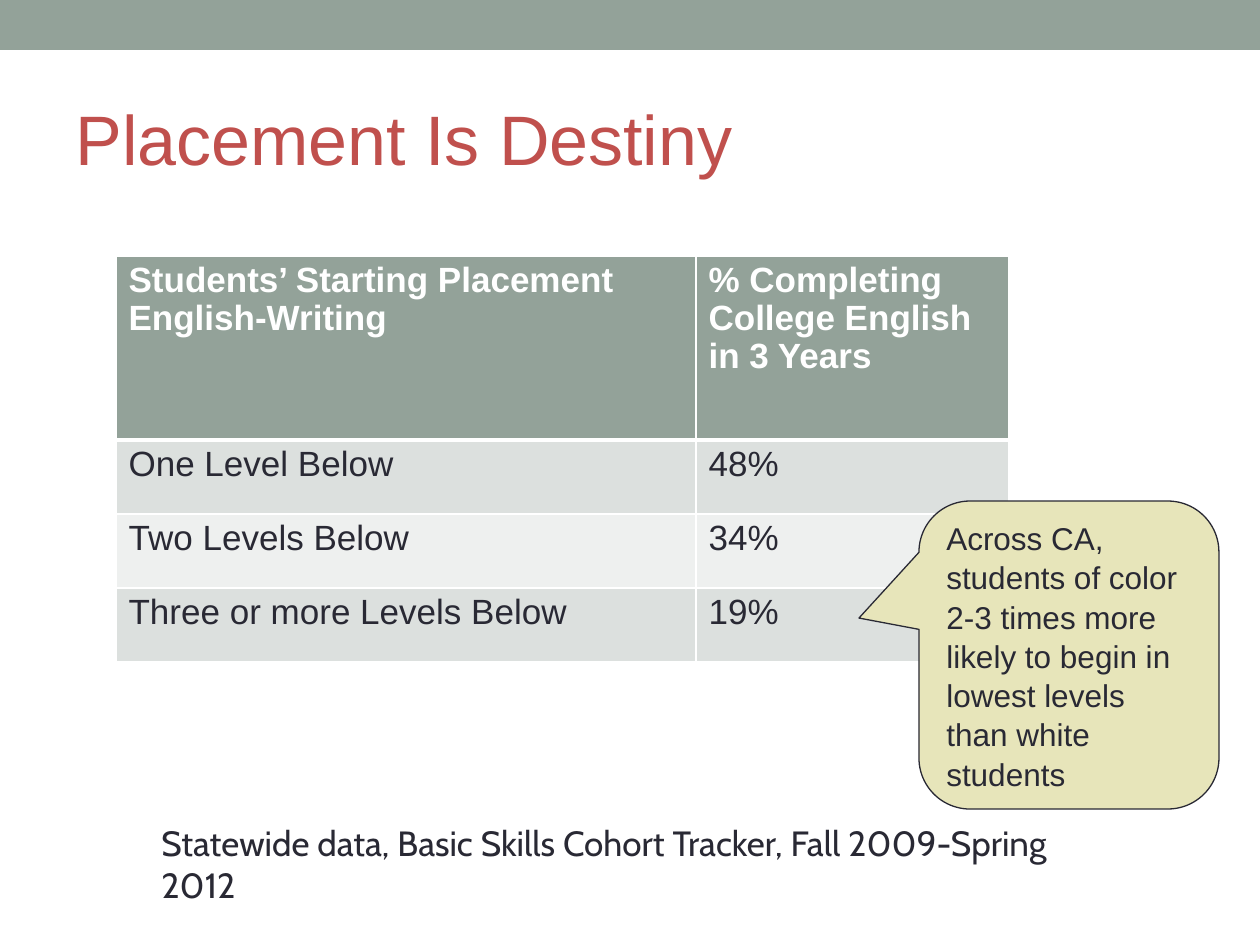
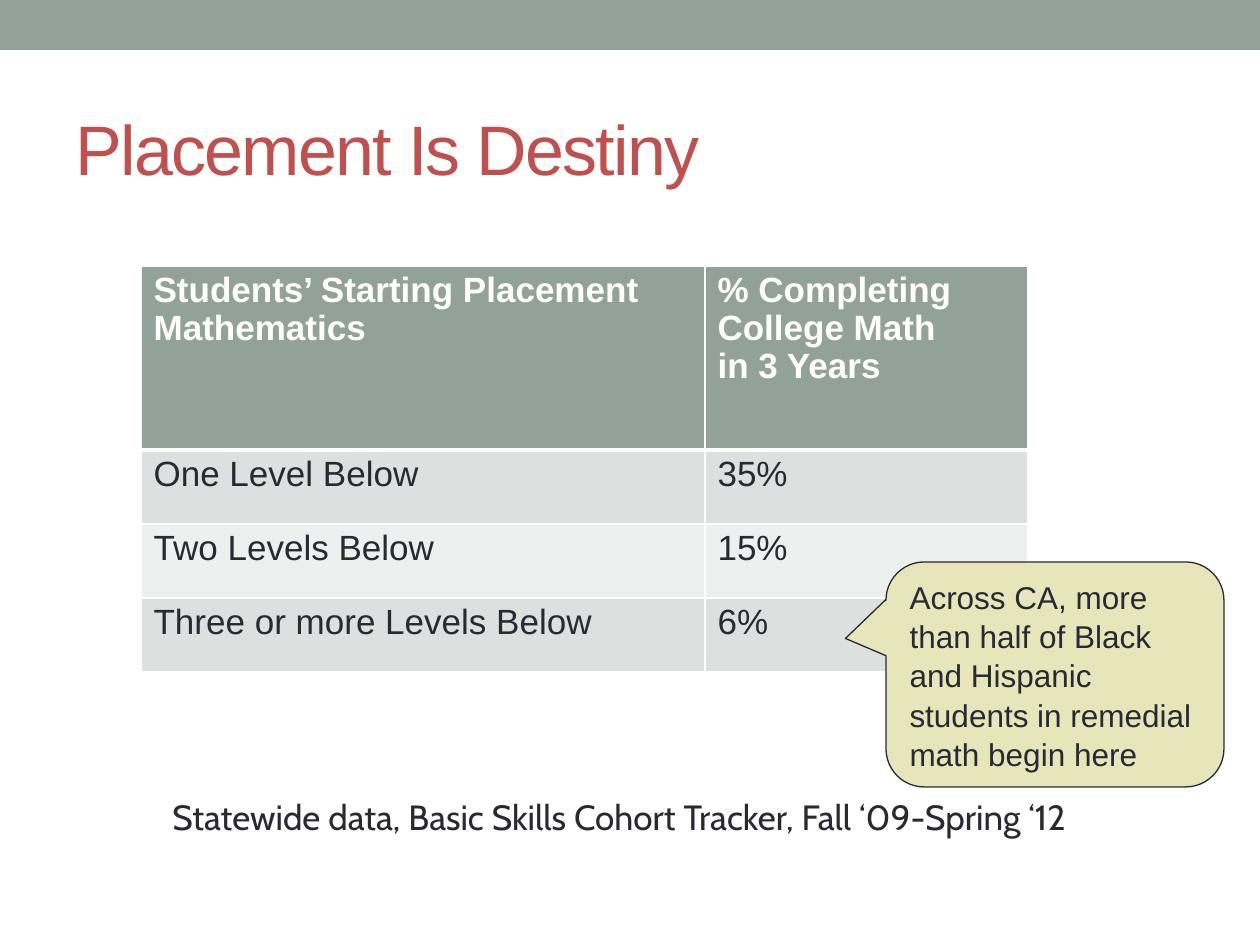
import pptx
import pptx.util
import pptx.dml.color
import pptx.enum.shapes
import pptx.enum.text
import pptx.oxml
import pptx.oxml.ns
from dataclasses import dataclass

SCALE = 914400 / 126
WIDE, HIGH = 1260, 945
BAND = 50
ROWS = (184, 74, 74, 74)
LEVELS = ("One Level Below", "Two Levels Below", "Three or more Levels Below")

SLIDES = [
    {
        "title": "Placement Is Destiny",
        "title_box": (63, 82, 1134, 97),
        "track": 0,
        "heads": ("Students’ Starting Placement\nEnglish-Writing",
                  "% Completing College English in 3 Years"),
        "rates": ("48%", "34%", "19%"),
        "table_at": (116, 256),
        "cols": (580, 313),
        "note": "Across CA, students of color 2-3 times more likely to begin "
                "in lowest levels than white students",
        "note_box": (919, 501, 300, 308),
        "tail": (-0.7, -0.12, 0.17),
        "credit": "Statewide data, Basic Skills Cohort Tracker, Fall 2009-Spring 2012",
        "credit_box": (149, 815, 946, 55),
    },
    {
        "title": "Placement Is Destiny",
        "title_box": (63, 73, 1134, 136),
        "track": -100,
        "heads": ("Students’ Starting Placement\nMathematics",
                  "% Completing College Math\nin 3 Years"),
        "rates": ("35%", "15%", "6%"),
        "table_at": (141, 266),
        "cols": (564, 323),
        "note": "Across CA, more than half of Black and Hispanic students "
                "in remedial math begin here",
        "note_box": (886, 562, 338, 225),
        "tail": (-0.62, -0.16, 0.17),
        "credit": "Statewide data, Basic Skills Cohort Tracker, Fall ‘09-Spring ‘12",
        "credit_box": (160, 789, 946, 55),
    },
]


@dataclass(frozen=True)
class Theme:
    sage: str = "93A299"
    red: str = "C0504D"
    ink: str = "292934"
    white: str = "FFFFFF"
    odd: str = "DCE0DE"
    even: str = "EEF0EF"
    cream: str = "E7E5BA"
    sans: str = "Arial"
    cabin: str = "Cabin"
    head: int = 40
    body: int = 20
    small: int = 18


LOOK = Theme()


def px(size):
    return pptx.util.Emu(round(size * SCALE))


def tint(code):
    return pptx.dml.color.RGBColor.from_string(code)


def paint(part, code):
    part.fill.solid()
    part.fill.fore_color.rgb = tint(code)


def write(frame, text, size=LOOK.body, font=LOOK.sans, color=LOOK.ink,
          bold=False, track=0, lead=1.0, middle=False):
    frame.word_wrap = True
    anchors = pptx.enum.text.MSO_ANCHOR
    frame.vertical_anchor = anchors.MIDDLE if middle else anchors.TOP
    frame.text = text
    for para in frame.paragraphs:
        para.alignment = pptx.enum.text.PP_ALIGN.LEFT
        para.line_spacing = lead
        for run in para.runs:
            face = run.font
            face.size, face.name, face.bold = pptx.util.Pt(size), font, bold
            face.color.rgb = tint(color)
            if track:
                run._r.get_or_add_rPr().set("spc", str(track))


def shape(slide, kind, box, fill):
    form = slide.shapes.add_shape(kind, *map(px, box))
    form.shadow.inherit = False
    paint(form, fill)
    return form


def edge(cell, bottom):
    props = cell._tc.get_or_add_tcPr()
    space = pptx.oxml.ns.nsdecls("a")
    widths = {"lnL": 1, "lnR": 1, "lnT": 1, "lnB": bottom}
    for spot, (side, width) in enumerate(widths.items()):
        line = pptx.oxml.parse_xml(
            f'<a:{side} {space} w="{width * 12700}"><a:solidFill>'
            f'<a:srgbClr val="{LOOK.white}"/></a:solidFill></a:{side}>')
        props.insert(spot, line)


def table(slide, page):
    cols = page["cols"]
    box = (*page["table_at"], sum(cols), sum(ROWS))
    grid = slide.shapes.add_table(len(ROWS), len(cols), *map(px, box)).table
    for col, width in zip(grid.columns, cols):
        col.width = px(width)
    for row, height in zip(grid.rows, ROWS):
        row.height = px(height)
    lines = [page["heads"], *zip(LEVELS, page["rates"])]
    for r, line in enumerate(lines):
        top = r == 0
        fill = LOOK.sage if top else (LOOK.odd if r % 2 else LOOK.even)
        for c, text in enumerate(line):
            cell = grid.cell(r, c)
            paint(cell, fill)
            edge(cell, 3 if top else 1)
            write(cell.text_frame, text, bold=top, lead=0.97,
                  color=LOOK.white if top else LOOK.ink)


def title(slide, page):
    head = slide.shapes.title
    head.left, head.top, head.width, head.height = map(px, page["title_box"])
    frame = head.text_frame
    frame.auto_size = pptx.enum.text.MSO_AUTO_SIZE.NONE
    frame.margin_top = px(20)
    write(frame, page["title"], size=LOOK.head, color=LOOK.red,
          track=page["track"], middle=True)


def note(slide, page):
    kind = pptx.enum.shapes.MSO_SHAPE.ROUNDED_RECTANGULAR_CALLOUT
    form = shape(slide, kind, page["note_box"], LOOK.cream)
    form.line.color.rgb = tint(LOOK.ink)
    form.line.width = pptx.util.Pt(0.75)
    for spot, value in enumerate(page["tail"]):
        form.adjustments[spot] = value
    write(form.text_frame, page["note"], size=LOOK.small, lead=1.04, middle=True)


def credit(slide, page):
    label = slide.shapes.add_textbox(*map(px, page["credit_box"]))
    write(label.text_frame, page["credit"], font=LOOK.cabin)


def main():
    deck = pptx.Presentation()
    deck.slide_width, deck.slide_height = px(WIDE), px(HIGH)
    for page in SLIDES:
        slide = deck.slides.add_slide(deck.slide_layouts[5])
        band = shape(slide, pptx.enum.shapes.MSO_SHAPE.RECTANGLE,
                     (0, 0, WIDE, BAND), LOOK.sage)
        band.line.fill.background()
        for part in (title, table, note, credit):
            part(slide, page)
    deck.save("out.pptx")


if __name__ == "__main__":
    main()
